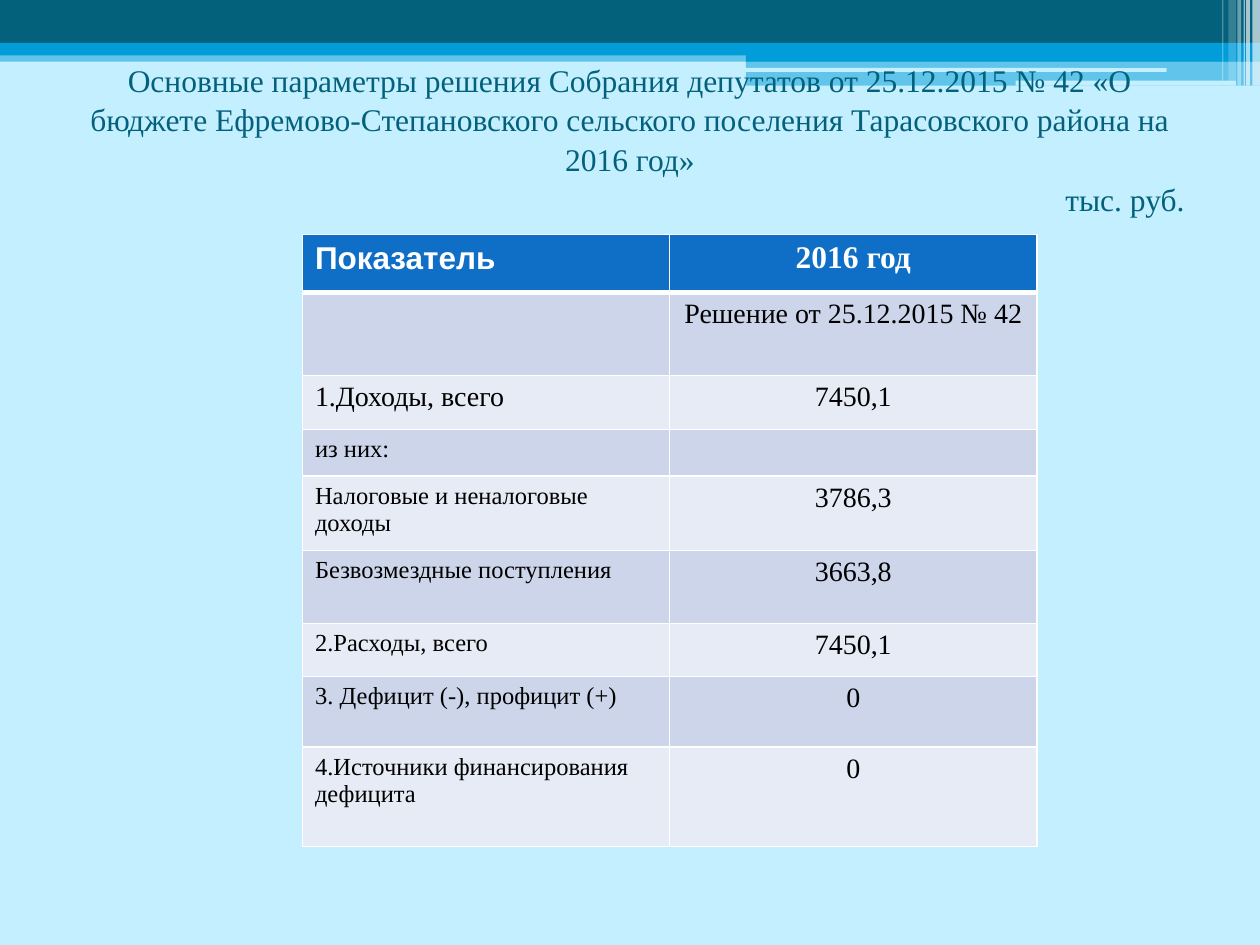
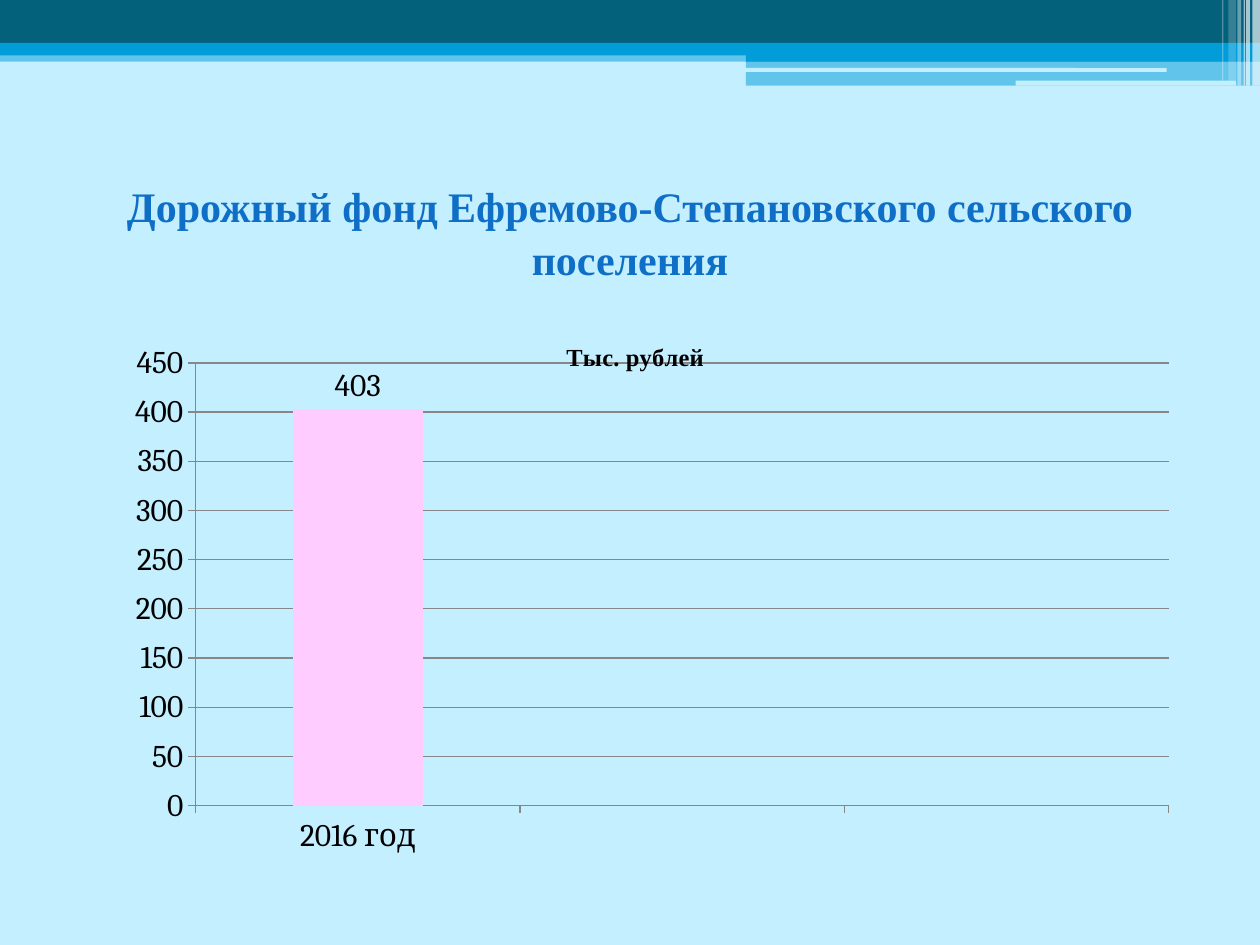
from lxml import etree
from pptx import Presentation
from pptx import util as u
from pptx.chart import data
from pptx.dml.color import RGBColor
from pptx.enum import chart as ch, shapes, text
from pptx.oxml.ns import qn

HUES = {
    "sky": "C4EFFF", "teal": "04617B", "cyan": "009DD9", "blue": "0F6FC6",
    "white": "FFFFFF", "black": "000000", "dark": "CCD5EA", "light": "E7EBF5",
    "pink": "FFCCFF", "gray": "878787",
}
SERIF = "Times New Roman"
COLS, ROWS = 100, 75
MID, END = text.PP_ALIGN.CENTER, text.PP_ALIGN.RIGHT

BANDS = [
    (0, 4, 100, 0.9, "cyan", 50),
    (0, 0, 100, 3.4, "teal", 100),
    (0, 3.4, 100, 1, "cyan", 100),
    (59.2, 3.9, 40.8, 1, "cyan", 100),
    (59.2, 4.8, 40.8, 2, "cyan", 50),
]
PILLS = [(59.1, 5.4, 33.5, 0.3), (80.6, 6.4, 17.5, 0.4)]
STRIPES = [
    (99.4, 0.6, 6.8, 65), (98.9, 0.3, 6.8, 65), (98.7, 0.1, 6.8, 60),
    (98.2, 0.3, 6.8, 40), (97.5, 0.6, 6.4, 20), (97, 0.1, 6.4, 30),
]
BUDGET = [
    ("Показатель", "2016 год", 18, 4.6),
    ("", "Решение от 25.12.2015 № 42", 14, 6.6),
    ("1.Доходы, всего", "7450,1", 16, 4.3),
    ("из них:", "", 14, 3.7),
    ("Налоговые и неналоговые доходы", "3786,3", 14, 5.9),
    ("Безвозмездные поступления", "3663,8", 14, 5.8),
    ("2.Расходы, всего", "7450,1", 14, 4.2),
    ("3. Дефицит (-), профицит (+)", "0", 14, 5.6),
    ("4.Источники финансирования дефицита", "0", 14, 7.9),
]


def rgb(hue):
    return RGBColor.from_string(HUES[hue])


def sub(node, tag, **attrs):
    return etree.SubElement(node, qn(tag), attrs)


class Deck:
    def __init__(self):
        self.prs = Presentation()
        self.prs.slide_width = u.Inches(10)
        self.prs.slide_height = u.Inches(7.5)
        back = self.prs.slide_master.background.fill
        back.solid()
        back.fore_color.rgb = rgb("sky")

    def x(self, n):
        return round(self.prs.slide_width * n / COLS)

    def y(self, n):
        return round(self.prs.slide_height * n / ROWS)

    def box(self, left, top, wide, high):
        return self.x(left), self.y(top), self.x(wide), self.y(high)

    def page(self):
        self.slide = self.prs.slides.add_slide(self.prs.slide_layouts[6])
        for *box, hue, alpha in BANDS:
            self.block(box, hue, alpha)
        for box in PILLS:
            self.block(box, "sky", kind=shapes.MSO_SHAPE.ROUNDED_RECTANGLE)
        for left, wide, high, alpha in STRIPES:
            self.block((left, 0, wide, high), "white", alpha)

    def block(self, box, hue, alpha=100, kind=shapes.MSO_SHAPE.RECTANGLE):
        item = self.slide.shapes.add_shape(kind, *self.box(*box))
        item.shadow.inherit = False
        item.fill.solid()
        item.fill.fore_color.rgb = rgb(hue)
        item.line.fill.background()
        if alpha < 100:
            tint = item._element.spPr.find(".//" + qn("a:srgbClr"))
            sub(tint, "a:alpha", val=str(alpha * 1000))

    def run(self, para, words, size, hue, bold=False, face=SERIF):
        run = para.add_run()
        run.text = words
        run.font.size, run.font.name, run.font.bold = u.Pt(size), face, bold
        run.font.color.rgb = rgb(hue)

    def title(self, box, lines, size, hue, bold=False):
        frame = self.slide.shapes.add_textbox(*self.box(*box)).text_frame
        frame.word_wrap = True
        frame.vertical_anchor = text.MSO_ANCHOR.MIDDLE
        for i, (words, align) in enumerate(lines):
            para = frame.add_paragraph() if i else frame.paragraphs[0]
            para.alignment, para.line_spacing = align, 1.05
            self.run(para, words, size, hue, bold)

    def edge(self, cell, base):
        props = cell._tc.get_or_add_tcPr()
        for i, side in enumerate("LRTB"):
            wide = base if side == "B" else 1
            line = etree.Element(qn("a:ln" + side), w=str(u.Pt(wide)))
            sub(sub(line, "a:solidFill"), "a:srgbClr", val=HUES["white"])
            props.insert(i, line)

    def cell(self, cell, words, size, head, hue, align, face):
        cell.fill.solid()
        cell.fill.fore_color.rgb = rgb(hue)
        self.edge(cell, 3 if head else 1)
        para = cell.text_frame.paragraphs[0]
        para.alignment = align
        if words:
            ink = "white" if head else "black"
            self.run(para, words, size, ink, head, face)
        else:
            sub(para._p, "a:endParaRPr", sz=str(size * 100))

    def table(self, left, top, wide, rows):
        high = sum(row[-1] for row in rows)
        box = self.box(left, top, wide, high)
        table = self.slide.shapes.add_table(len(rows), 2, *box).table
        table.first_row = table.horz_banding = False
        for col in table.columns:
            col.width = self.x(wide / 2)
        for i, (name, value, size, tall) in enumerate(rows):
            table.rows[i].height = self.y(tall)
            head = i == 0
            hue = "blue" if head else ("light", "dark")[i % 2]
            face = "Arial" if head else SERIF
            self.cell(table.cell(i, 0), name, size, head, hue, None, face)
            size = 18 if head else 16 if value else 14
            self.cell(table.cell(i, 1), value, size, head, hue, MID, SERIF)

    def place(self, node, spot, inner=False):
        old = node.find(qn("c:layout"))
        if old is not None:
            node.remove(old)
        lay = etree.Element(qn("c:layout"))
        man = sub(lay, "c:manualLayout")
        if inner:
            sub(man, "c:layoutTarget", val="inner")
        for key in "xy":
            sub(man, f"c:{key}Mode", val="edge")
        for key, val in zip("xywh", spot):
            sub(man, f"c:{key}", val=str(val))
        node.insert(0 if inner else 1, lay)

    def chart(self, box, title, names, values):
        info = data.CategoryChartData()
        info.categories = names
        info.add_series("Series 1", values)
        kind = ch.XL_CHART_TYPE.COLUMN_CLUSTERED
        chart = self.slide.shapes.add_chart(kind, *self.box(*box), info).chart
        chart.has_legend = False
        font = chart.font
        font.name, font.size, font.color.rgb = "Cambria", u.Pt(18), rgb("black")
        para = chart.chart_title.text_frame.paragraphs[0]
        self.run(para, title, 14, "black", True)
        self.place(chart.chart_title._element, (0.44, 0.045))
        chart.chart_title.include_in_layout = False
        area = chart._chartSpace.chart.plotArea
        self.place(area, (0.117, 0.089, 0.858, 0.743), True)
        for axis in (chart.category_axis, chart.value_axis):
            axis.format.line.color.rgb = rgb("gray")
            axis.major_tick_mark = ch.XL_TICK_MARK.OUTSIDE
        axis.minimum_scale, axis.maximum_scale, axis.major_unit = 0, 450, 50
        axis.major_gridlines.format.line.color.rgb = rgb("gray")
        plot = chart.plots[0]
        plot.gap_width, plot.vary_by_categories = 150, False
        fill = plot.series[0].format.fill
        fill.solid()
        fill.fore_color.rgb = rgb("pink")
        plot.has_data_labels = True
        plot.data_labels.show_value = True
        plot.data_labels.position = ch.XL_LABEL_POSITION.OUTSIDE_END


def main():
    deck = Deck()
    deck.page()
    deck.title((5, 5.5, 90, 10.9), [
        ("Основные параметры решения Собрания депутатов от 25.12.2015 № 42 "
         "«О бюджете Ефремово-Степановского сельского поселения "
         "Тарасовского района на 2016 год»", MID),
        ("тыс. руб.", END),
    ], 18, "teal")
    deck.table(24, 18.6, 58.3, BUDGET)

    deck.page()
    deck.title((5, 12.5, 90, 11.7), [
        ("Дорожный фонд Ефремово-Степановского сельского поселения", MID),
    ], 24, "blue", True)
    deck.chart((5, 24.6, 90, 47.3), "Тыс. рублей",
               ["2016 год", "", ""], [403, None, None])
    deck.prs.save("out.pptx")


if __name__ == "__main__":
    main()
